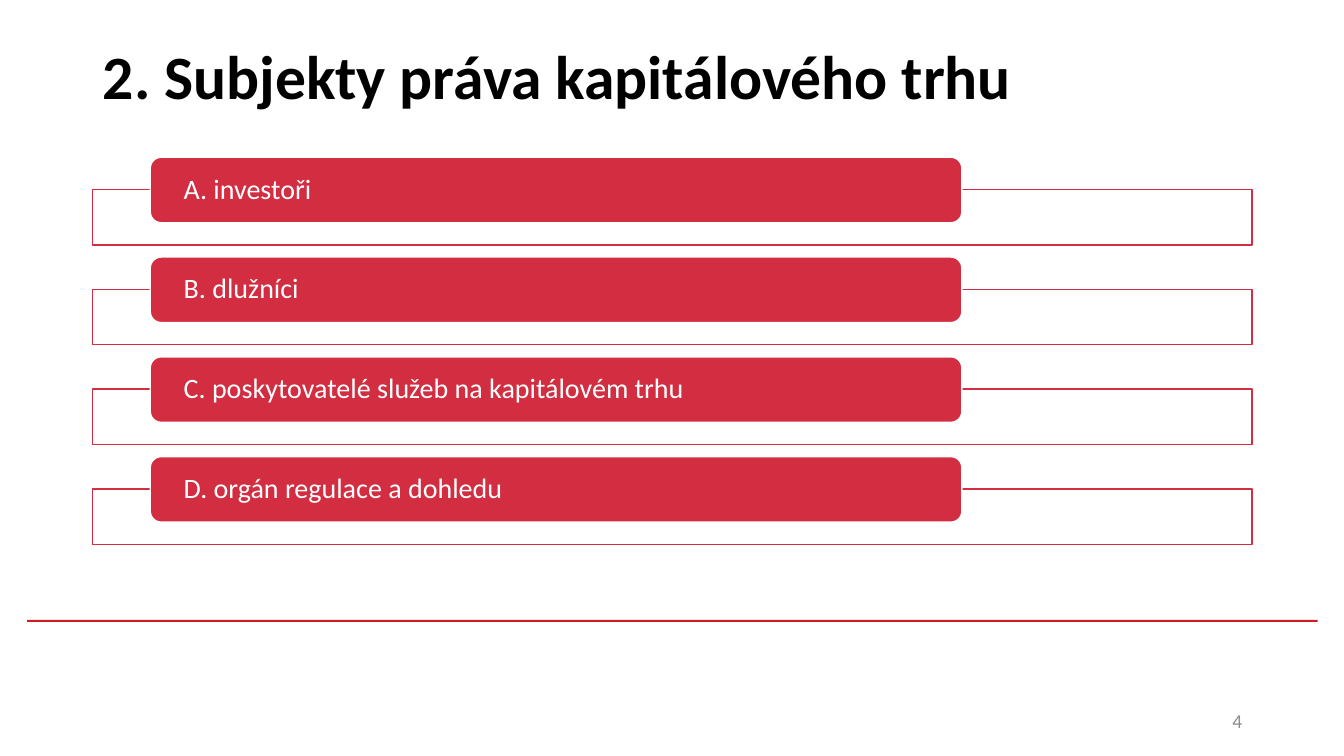
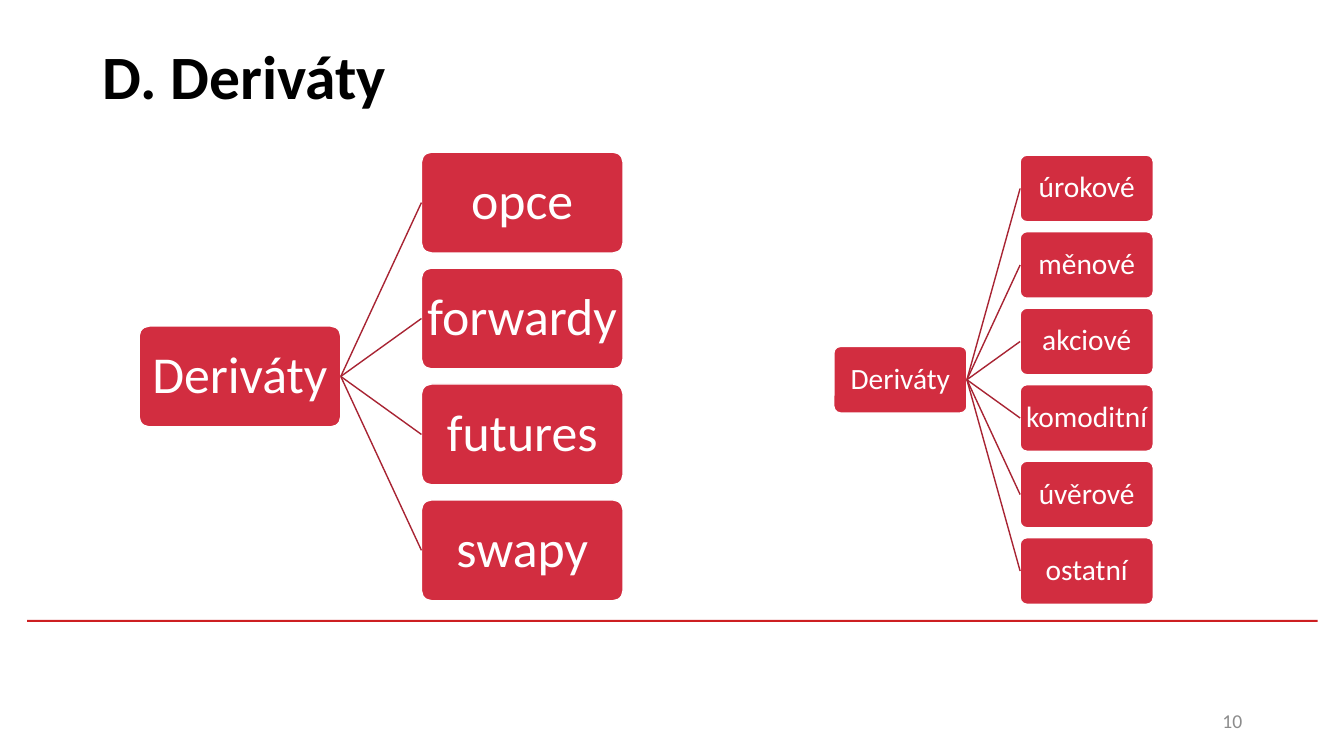
from pptx import Presentation
from pptx.dml.color import RGBColor
from pptx.enum.shapes import MSO_CONNECTOR, MSO_SHAPE
from pptx.enum.text import MSO_ANCHOR, PP_ALIGN
from pptx.oxml.ns import qn
from pptx.util import Inches, Pt
from lxml import etree

COLORS = {name: RGBColor.from_string(value) for name, value in {
    "red": "D22D40", "rule": "CD1F21", "link": "A82433",
    "white": "FFFFFF", "black": "000000", "gray": "8C8C8C"}.items()}


def add_box(s, kind, x, y, w, h, fill, line=None):
    sp = s.shapes.add_shape(kind, Inches(x), Inches(y), Inches(w), Inches(h))
    sp.shadow.inherit = False
    sp.fill.solid()
    sp.fill.fore_color.rgb = COLORS[fill]
    if line:
        sp.line.color.rgb = COLORS[line]
        sp.line.width = Pt(1)
    else:
        sp.line.fill.background()
    return sp


def set_text(sp, text, size, color, align=PP_ALIGN.LEFT, margin=None, spacing=None, bold=False):
    tf = sp.text_frame
    tf.word_wrap = True
    tf.vertical_anchor = MSO_ANCHOR.MIDDLE
    if margin is not None:
        tf.margin_left = tf.margin_right = Inches(margin)
        tf.margin_top = tf.margin_bottom = 0
    p = tf.paragraphs[0]
    p.alignment = align
    if spacing:
        p.line_spacing = spacing
    r = p.add_run()
    r.text = text
    for name, value in {"name": "Calibri", "size": Pt(size), "bold": bold}.items():
        setattr(r.font, name, value)
    r.font.color.rgb = COLORS[color]


prs = Presentation()
prs.slide_width, prs.slide_height = Inches(13.33), Inches(7.5)
layout = prs.slide_layouts.get_by_name("Title Only")
title = layout.placeholders[0]
title.left, title.top, title.width, title.height = map(Inches, (0.92, 0.02, 11.5, 1.45))

# Titles and page numbers
slides = []
for heading, number in (("2. Subjekty práva kapitálového trhu", "4"), ("D. Deriváty", "10")):
    s = prs.slides.add_slide(layout)
    set_text(s.shapes.title, heading, 44, "black", bold=True)
    page = s.shapes.add_textbox(Inches(9.42), Inches(6.95), Inches(3), Inches(0.4))
    set_text(page, number, 14, "gray", PP_ALIGN.RIGHT)
    slides.append(s)
subjects, derivatives = slides

# The red rule belongs to the shared layout
rule = add_box(subjects, MSO_SHAPE.RECTANGLE, 0.27, 6.15, 12.8, 0.02, "rule")
layout.shapes.element.append(rule.element)

# Slide 1: list of subjects
labels = ("A. investoři", "B. dlužníci", "C. poskytovatelé služeb na kapitálovém trhu",
          "D. orgán regulace a dohledu")
for i, label in enumerate(labels):
    y = 1.56 + i * 0.99
    add_box(subjects, MSO_SHAPE.RECTANGLE, 0.92, y + 0.32, 11.5, 0.55, "white", "red")
    tab = add_box(subjects, MSO_SHAPE.ROUNDED_RECTANGLE, 1.49, y, 8.05, 0.65, "red", "white")
    set_text(tab, label, 20, "white", margin=0.3, spacing=0.9)

# Slide 2: two trees, each node half as high as it is wide
trees = (
    (1.38, 1.51, 2, 37, ("opce", "forwardy", "futures", "swapy")),
    (8.27, 1.54, 1.32, 21,
     ("úrokové", "měnové", "akciové", "komoditní", "úvěrové", "ostatní")),
)
for x, top, w, size, children in trees:
    h = w / 2
    pitch = 1.15 * h
    nodes = [("Deriváty", x, top + pitch * (len(children) - 1) / 2)]
    nodes += [(child, x + 1.4 * w, top + i * pitch) for i, child in enumerate(children)]
    root = None
    for label, left, y in nodes:
        node = add_box(derivatives, MSO_SHAPE.ROUNDED_RECTANGLE, left, y, w, h, "red", "white")
        node.adjustments[0] = 0.1
        set_text(node, label, size, "white", PP_ALIGN.CENTER, margin=0, spacing=0.9)
        if root is None:
            root = node
            continue
        link = derivatives.shapes.add_connector(MSO_CONNECTOR.STRAIGHT, 0, 0, 0, 0)
        link.begin_connect(root, 3)
        link.end_connect(node, 1)
        link.line.color.rgb = COLORS["link"]
        link.line.width = Pt(1)
        etree.SubElement(link.element.spPr, qn("a:effectLst"))

prs.save("out.pptx")
